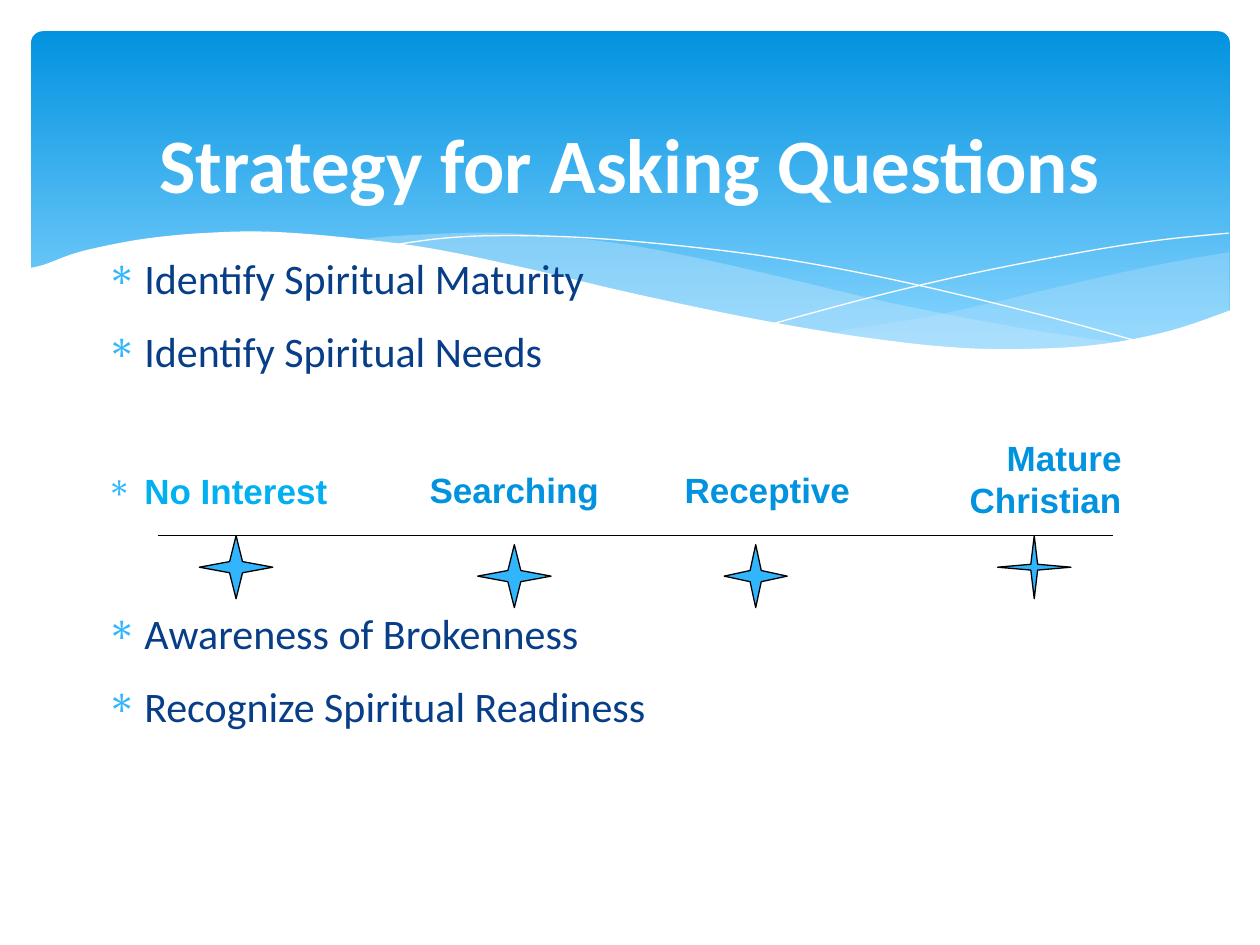
from dataclasses import dataclass

import pptx
import pptx.dml.color
import pptx.enum.dml
import pptx.enum.shapes
import pptx.enum.text
import pptx.oxml
import pptx.oxml.ns
import pptx.util
from lxml import etree

Cm, Pt = pptx.util.Cm, pptx.util.Pt
RGBColor = pptx.dml.color.RGBColor
SHAPE = pptx.enum.shapes.MSO_SHAPE
ALIGN = pptx.enum.text.PP_ALIGN
ANCHOR = pptx.enum.text.MSO_ANCHOR
AUTO = pptx.enum.text.MSO_AUTO_SIZE
qn = pptx.oxml.ns.qn

WHITE = RGBColor(0xFF, 0xFF, 0xFF)
BLACK = RGBColor(0, 0, 0)
BLUE = RGBColor(0x02, 0x93, 0xE0)
SKY = RGBColor(0x83, 0xD3, 0xFE)
VEIL = RGBColor(0xC6, 0xE7, 0xFC)
ACCENT = RGBColor(0x31, 0xB6, 0xFD)
CYAN = RGBColor(0x00, 0xB0, 0xF0)
NAVY = RGBColor(0x07, 0x3E, 0x87)

Points = list[tuple[float, float]]


@dataclass
class Wave:
    """A curve through points, then straight corners; filled or a thin strand."""
    points: Points
    corners: Points
    fill: RGBColor | None = None
    opacity: int = 100


@dataclass
class Bullet:
    text: str
    before: float = 4.2
    size: int = 24
    font: str = "Calibri"
    color: RGBColor = NAVY
    bold: bool = False


@dataclass
class Label:
    text: str
    left: float
    top: float
    width: float
    height: float
    align: ALIGN = ALIGN.LEFT


@dataclass
class Star:
    left: float
    top: float
    width: float = 1.48
    waist: float = 0.125


WAVES = [
    Wave([(24.78, 5.08), (23.39, 5.33), (21.87, 5.66), (19.79, 6.15), (18.52, 6.42), (16.79, 6.73),
          (18.26, 6.91), (19.84, 7.04), (21.18, 7.05), (22.4, 6.96), (23.57, 6.7), (24.78, 6.27)],
         [], VEIL, 29),
    Wave([(22.68, 6.93), (20.5, 6.6), (17.93, 6.1), (15.98, 5.64), (14.1, 5.21), (12.42, 4.9),
          (10.67, 4.72), (9.17, 4.7), (7.26, 4.85), (9.19, 5.16), (11.4, 5.64), (14.38, 6.3),
          (16.51, 6.71), (18.69, 6.99), (20.5, 7.06), (21.77, 7.03), (22.68, 6.93)],
         [], VEIL, 40),
    Wave([(7.85, 4.95), (8.97, 4.8), (10.19, 4.75), (11.91, 4.8), (14.12, 5), (16.15, 5.28),
          (18.47, 5.74), (21.11, 6.38), (23.04, 6.91)], []),
    Wave([(15.57, 6.53), (17.65, 5.97), (19.71, 5.49), (22, 5.05), (23.47, 4.83), (24.77, 4.7)], []),
    Wave([(24.82, 6.25), (23.62, 6.66), (22.28, 6.93), (20.9, 7.03), (19.33, 7.01), (17.48, 6.81),
          (15.32, 6.45), (12.78, 5.92), (10.62, 5.41), (8.64, 5), (6.88, 4.78), (5.36, 4.67),
          (4.09, 4.7), (3.02, 4.8), (2.16, 4.95), (1.5, 5.11), (0.91, 5.33), (0.58, 5.41)],
         [(0.58, 8.36), (24.82, 8.36)], WHITE),
]
BULLETS = [
    Bullet("Identify Spiritual Maturity"),
    Bullet("Identify Spiritual Needs"),
    Bullet("No Interest", 46.3, 20, "Arial", CYAN, True),
    Bullet("Awareness of Brokenness", 46.5),
    Bullet("Recognize Spiritual Readiness"),
]
LABELS = [
    Label("Searching", 8.41, 9.31, 4.45, 1.1),
    Label("Receptive", 13.55, 9.31, 4.23, 1.1),
    Label("Mature Christian", 19.05, 8.68, 3.81, 1.96, ALIGN.RIGHT),
]
STARS = [Star(4.02, 10.8), Star(20.11, 10.8, waist=0.065), Star(14.6, 10.98, 1.27), Star(9.63, 10.98)]


def smooth(points: Points, steps: int = 6) -> Points:
    """Catmull-Rom curve through the points."""
    padded = [points[0], *points, points[-1]]
    out = [points[0]]
    for a, b, c, d in zip(padded, padded[1:], padded[2:], padded[3:]):
        for i in range(1, steps + 1):
            t = i / steps
            out.append(tuple(
                (2 * q + (r - p) * t + (2 * p - 5 * q + 4 * r - s) * t**2
                 + (3 * q - p - 3 * r + s) * t**3) / 2
                for p, q, r, s in zip(a, b, c, d)))
    return out


def add_wave(s, wave: Wave) -> None:
    pts = [(Cm(x), Cm(y)) for x, y in smooth(wave.points) + wave.corners]
    fb = s.shapes.build_freeform(*pts[0])
    fb.add_line_segments(pts[1:], close=wave.fill is not None)
    sp = fb.convert_to_shape()
    sp.shadow.inherit = False
    if wave.fill is None:
        sp.fill.background()
        sp.line.color.rgb = WHITE
        sp.line.width = Pt(0)
        return
    sp.fill.solid()
    sp.fill.fore_color.rgb = wave.fill
    sp.line.fill.background()
    if wave.opacity < 100:
        clr = sp._element.spPr.find(qn("a:solidFill"))[0]
        etree.SubElement(clr, qn("a:alpha"), val=str(wave.opacity * 1000))


def add_box(s, left: float, top: float, width: float, height: float):
    tf = s.shapes.add_textbox(Cm(left), Cm(top), Cm(width), Cm(height)).text_frame
    tf.word_wrap = True
    return tf


def write(p, text: str, *, size: int, color: RGBColor, font: str = "Calibri",
          bold: bool = False, align: ALIGN = ALIGN.LEFT) -> None:
    p.alignment = align
    r = p.add_run()
    r.text = text
    r.font.size = Pt(size)
    r.font.name = font
    r.font.bold = bold
    r.font.color.rgb = color


def add_bullet(p, item: Bullet) -> None:
    write(p, item.text, size=item.size, color=item.color, font=item.font, bold=item.bold)
    p.line_spacing = 1.3
    p.space_before = Pt(item.before)
    pPr = p._p.get_or_add_pPr()
    pPr.set("marL", str(Cm(0.76)))
    pPr.set("indent", str(Cm(-0.76)))
    clr = etree.SubElement(pPr, qn("a:buClr"))
    etree.SubElement(clr, qn("a:srgbClr"), val=str(ACCENT))
    etree.SubElement(pPr, qn("a:buChar"), char="∗")


def add_star(s, star: Star) -> None:
    sp = s.shapes.add_shape(SHAPE.STAR_4_POINT, Cm(star.left), Cm(star.top), Cm(star.width), Cm(1.27))
    sp.adjustments[0] = star.waist
    sp.shadow.inherit = False
    sp.fill.solid()
    sp.fill.fore_color.rgb = ACCENT
    sp.line.color.rgb = BLACK
    sp.line.width = Pt(0.75)


def main() -> None:
    prs = pptx.Presentation()
    prs.slide_width, prs.slide_height = Cm(25.4), Cm(19.05)
    s = prs.slides.add_slide(prs.slide_layouts[6])

    # Gradient panel and waves
    sp = s.shapes.add_shape(SHAPE.ROUNDED_RECTANGLE, Cm(0.63), Cm(0.63), Cm(24.16), Cm(6.86))
    sp.adjustments[0] = 0.034
    sp.shadow.inherit = False
    sp.line.fill.background()
    sp.fill.gradient()
    sp.fill.gradient_angle = 270
    for stop, color, position in zip(sp.fill.gradient_stops, (BLUE, SKY), (0, 0.9)):
        stop.color.rgb = color
        stop.position = position
    for wave in WAVES:
        add_wave(s, wave)

    # Title
    tf = add_box(s, 0, 1.7, 25.4, 3.18)
    tf.vertical_anchor = ANCHOR.MIDDLE
    write(tf.paragraphs[0], "Strategy for Asking Questions", size=44, color=WHITE,
          bold=True, align=ALIGN.CENTER)

    # Bullet list
    tf = add_box(s, 1.9, 4.66, 21.59, 12.27)
    for i, item in enumerate(BULLETS):
        add_bullet(tf.add_paragraph() if i else tf.paragraphs[0], item)

    # Maturity scale: line, labels, stars
    line = s.shapes.add_connector(pptx.enum.shapes.MSO_CONNECTOR.STRAIGHT,
                                  Cm(3.18), Cm(10.8), Cm(22.44), Cm(10.8))
    line.line.color.rgb = BLACK
    line.line.width = Pt(0.75)
    etree.SubElement(line._element.spPr, qn("a:effectLst"))
    for label in LABELS:
        tf = add_box(s, label.left, label.top, label.width, label.height)
        tf.auto_size = AUTO.SHAPE_TO_FIT_TEXT
        write(tf.paragraphs[0], label.text, size=20, color=BLUE, font="Arial",
              bold=True, align=label.align)
    for star in STARS:
        add_star(s, star)

    prs.save("out.pptx")


if __name__ == "__main__":
    main()
